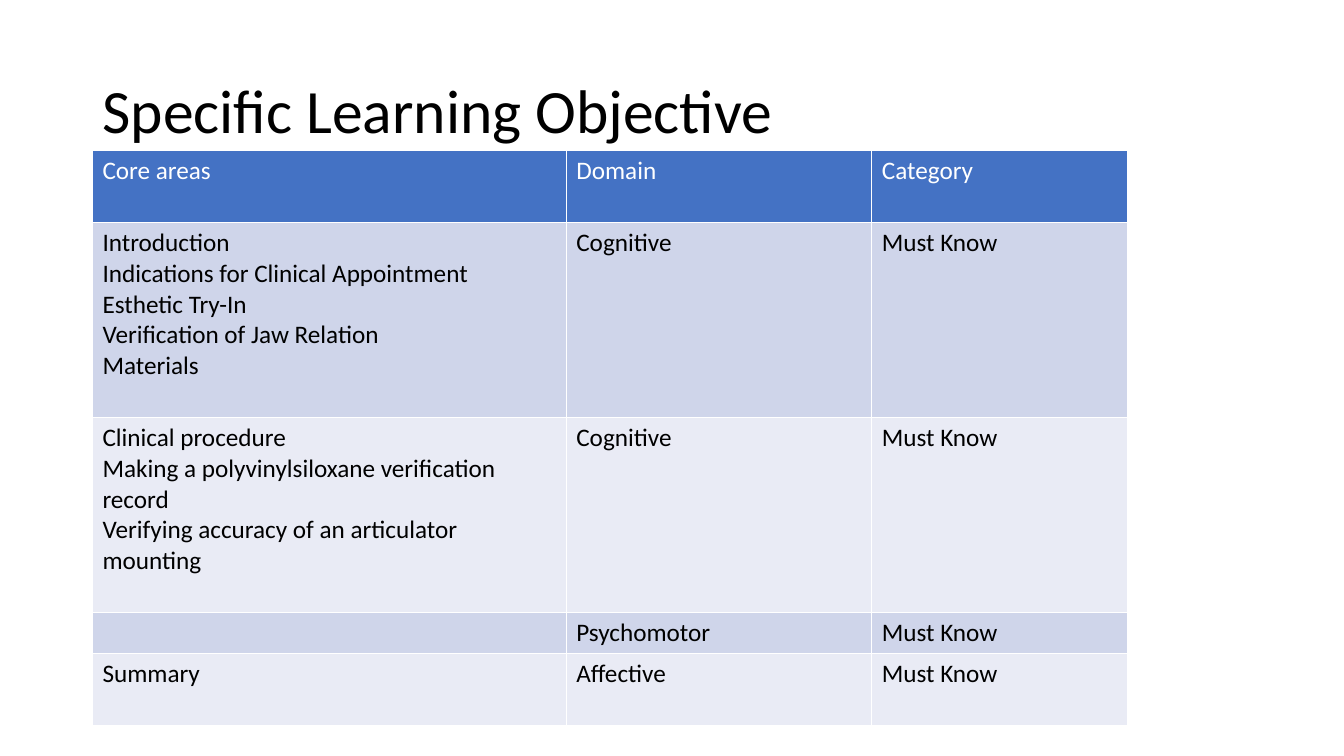
from pptx import Presentation
from pptx.dml.color import RGBColor
from pptx.enum.text import MSO_ANCHOR, MSO_AUTO_SIZE, PP_ALIGN
from pptx.util import Cm, Pt

LEFT = PP_ALIGN.LEFT
MIDDLE = MSO_ANCHOR.MIDDLE
NO_AUTOFIT = MSO_AUTO_SIZE.NONE
TITLE_ONLY = 5

COLORS = {
    "header": "4472C4",
    "odd_row": "CFD5EA",
    "even_row": "E9EBF5",
    "header_text": "FFFFFF",
    "text": "000000",
}
COLUMN_WIDTHS = [11.94, 7.7, 6.45]
ROW_HEIGHTS = [1.83, 4.91, 4.91, 1.03, 1.83]
ROWS = [
    ["Core areas", "Domain", "Category"],
    [
        "Introduction\nIndications for Clinical Appointment\nEsthetic Try-In\n"
        "Verification of Jaw Relation\nMaterials",
        "Cognitive",
        "Must Know",
    ],
    [
        "Clinical procedure\nMaking a polyvinylsiloxane verification record\n"
        "Verifying accuracy of an articulator mounting",
        "Cognitive",
        "Must Know",
    ],
    ["", "Psychomotor", "Must Know"],
    ["Summary", "Affective", "Must Know"],
]


def format_font(font, size, color):
    values = {"name": "Calibri", "size": Pt(size), "bold": False}
    for attribute, value in values.items():
        setattr(font, attribute, value)
    font.color.rgb = RGBColor.from_string(COLORS[color])


presentation = Presentation()
presentation.slide_width = Cm(33.87)
presentation.slide_height = Cm(19.05)
slide = presentation.slides.add_slide(presentation.slide_layouts[TITLE_ONLY])

# Title
title = slide.shapes.title
title_box = {"left": 2.33, "top": 1.01, "width": 29.21, "height": 3.68}
for attribute, length in title_box.items():
    setattr(title, attribute, Cm(length))
title_frame = title.text_frame
title_frame.text = "Specific Learning Objective"
title_frame.auto_size = NO_AUTOFIT
title_frame.vertical_anchor = MIDDLE
title_paragraph = title_frame.paragraphs[0]
title_paragraph.alignment = LEFT
title_paragraph.line_spacing = 0.9
format_font(title_paragraph.runs[0].font, 44, "text")

# Objectives table
table = slide.shapes.add_table(
    len(ROWS), len(COLUMN_WIDTHS), Cm(2.33), Cm(3.78),
    Cm(sum(COLUMN_WIDTHS)), Cm(sum(ROW_HEIGHTS)),
).table
for column, width in zip(table.columns, COLUMN_WIDTHS):
    column.width = Cm(width)
for row, height in zip(table.rows, ROW_HEIGHTS):
    row.height = Cm(height)

# Cell text and banded fills
for row_index, texts in enumerate(ROWS):
    if row_index == 0:
        fill_color, text_color = "header", "header_text"
    else:
        fill_color = "odd_row" if row_index % 2 else "even_row"
        text_color = "text"
    for column_index, text in enumerate(texts):
        cell = table.cell(row_index, column_index)
        cell.fill.solid()
        cell.fill.fore_color.rgb = RGBColor.from_string(COLORS[fill_color])
        if text:
            cell.text = text
        for paragraph in cell.text_frame.paragraphs:
            for run in paragraph.runs:
                format_font(run.font, 18, text_color)

presentation.save("out.pptx")
